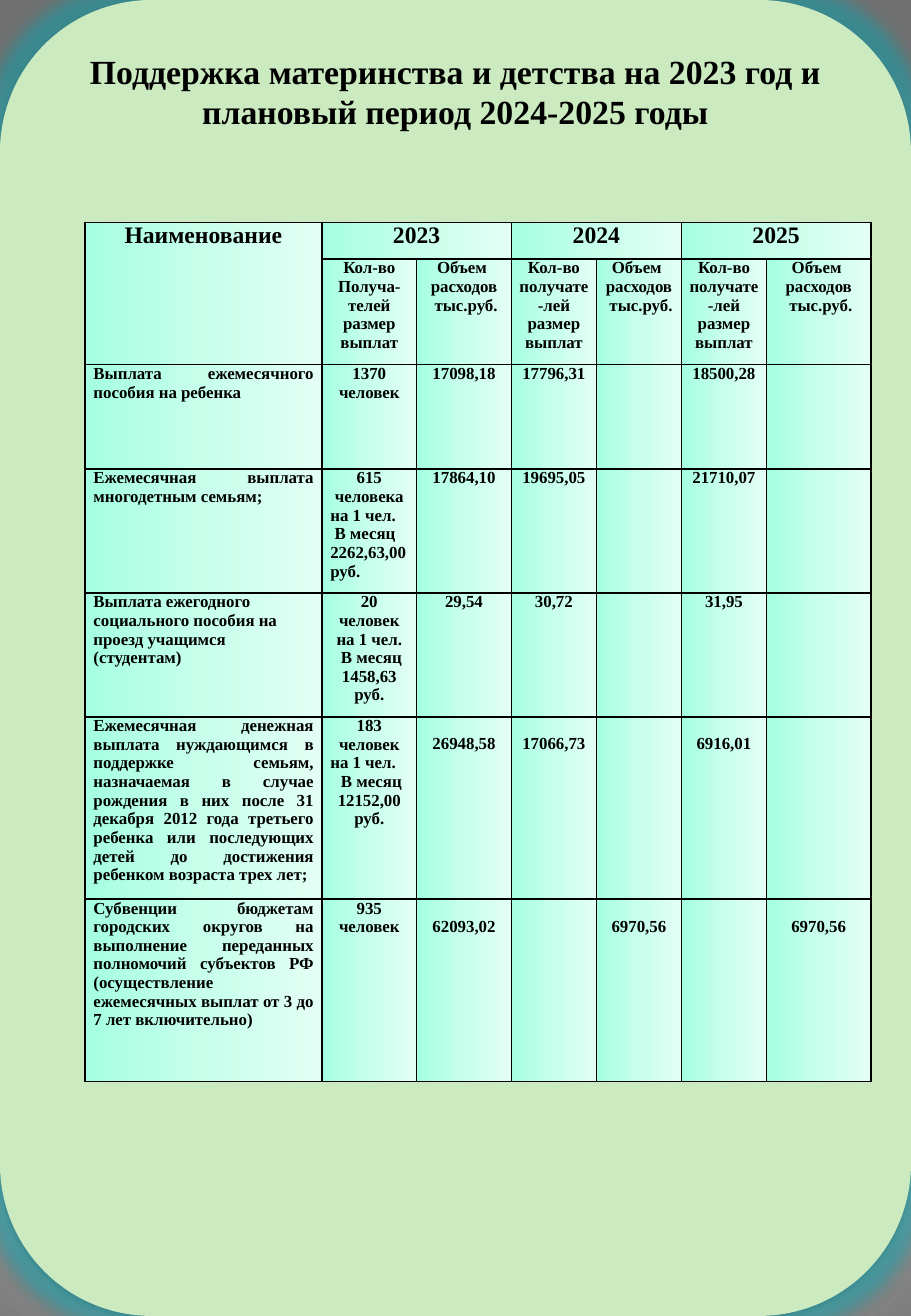
from lxml.etree import SubElement
from pptx import Presentation
from pptx.dml.color import RGBColor
from pptx.enum.shapes import MSO_SHAPE as Shape
from pptx.enum.text import MSO_ANCHOR as Anchor, PP_ALIGN as Align
from pptx.oxml.ns import qn
from pptx.util import Inches, Pt

BLACK = RGBColor(0x00, 0x00, 0x00)
WHITE = RGBColor(0xFF, 0xFF, 0xFF)
GRAY = RGBColor(0x70, 0x70, 0x70)
PANEL_GREEN = RGBColor(0xCB, 0xEA, 0xC0)
GLOW_TEAL = RGBColor(0x00, 0xC5, 0xD4)
CELL_STOPS = [(0, RGBColor(0xA5, 0xFF, 0xE1)), (50, RGBColor(0xC7, 0xFF, 0xEB)),
              (100, RGBColor(0xE3, 0xFF, 0xF5))]
BACKGROUND_STOPS = [(0, WHITE), (25, WHITE), (100, GRAY)]

GRID_COLUMNS, GRID_ROWS = 75, 108.3
ALIGNS = {"c": Align.CENTER, "l": Align.LEFT, "j": Align.JUSTIFY}

TITLE = "Поддержка материнства и детства на 2023 год и плановый период 2024-2025 годы"
YEARS = ["2023", "2024", "2025"]
VOLUME = "Объем \nрасходов\n тыс.руб."
RECIPIENTS = "Кол-во\nполучате-лей\nразмер\nвыплат"
FIRST_RECIPIENTS = "Кол-во\nПолуча-телей\nразмер\nвыплат"
SUBHEADS = [FIRST_RECIPIENTS, VOLUME, RECIPIENTS, VOLUME, RECIPIENTS, VOLUME]
# Name and its alignment, recipients and their alignments, then the amounts
PAYMENTS = [
    ("Выплата ежемесячного пособия на ребенка ", "j", "1370 человек", "c",
     ["17098,18", "17796,31", "", "18500,28", ""]),
    ("Ежемесячная выплата многодетным семьям;", "j",
     "615 человека\nна 1 чел.\n В месяц 2262,63,00 руб.", "cll",
     ["17864,10", "19695,05", "", "21710,07", ""]),
    ("Выплата ежегодного социального пособия на проезд учащимся (студентам)", "l",
     "20 человек\nна 1 чел.\n В месяц 1458,63 руб.", "ccc",
     ["29,54", "30,72", "", "31,95", ""]),
    ("Ежемесячная денежная выплата нуждающимся в поддержке семьям, назначаемая "
     "в случае рождения в них после 31 декабря 2012 года третьего ребенка или "
     "последующих детей до достижения ребенком возраста трех лет;", "j",
     "183 человек\nна 1 чел.\n В месяц 12152,00 руб.", "clc",
     ["26948,58", "17066,73", "", "6916,01", ""]),
    ("Субвенции бюджетам городских округов на выполнение переданных полномочий "
     "субъектов РФ (осуществление ежемесячных выплат от 3 до 7 лет включительно)", "j",
     "935 человек", "c",
     ["62093,02", "", "6970,56", "", "6970,56"]),
]
COLUMN_WIDTHS = [19.5, 7.8, 7.8, 7, 7, 7, 8.6]
ROW_HEIGHTS = [3, 8.7, 8.6, 10.2, 10.2, 15, 15]
LOWERED_ROWS = (5, 6)


def add_color(parent, color, alpha=None):
    element = SubElement(parent, qn("a:srgbClr"), val=str(color))
    if alpha is not None:
        SubElement(element, qn("a:alpha"), val=str(alpha * 1000))


def add_stops(gradient, stops):
    stop_list = SubElement(gradient, qn("a:gsLst"))
    for position, color in stops:
        add_color(SubElement(stop_list, qn("a:gs"), pos=str(position * 1000)), color)


def write(frame, text, *, size=10, aligns="c"):
    """Write one paragraph per line; one letter of aligns serves all lines."""
    frame.word_wrap = True
    lines = text.split("\n")
    if len(aligns) == 1:
        aligns *= len(lines)
    for index, (line, align) in enumerate(zip(lines, aligns)):
        paragraph = frame.add_paragraph() if index else frame.paragraphs[0]
        paragraph.alignment = ALIGNS[align]
        run = paragraph.add_run()
        run.text = line
        run.font.name = "Times New Roman"
        run.font.size = Pt(size)
        run.font.bold = True
        run.font.color.rgb = BLACK


class SlideBuilder:
    def __init__(self, slide):
        self.slide = slide

    def grid(self, *lengths):
        return [Inches(length / 10) for length in lengths]

    def background(self):
        self.slide.background.fill.gradient()
        gradient = self.slide.element.find(".//" + qn("a:gradFill"))
        for child in list(gradient):
            gradient.remove(child)
        add_stops(gradient, BACKGROUND_STOPS)
        circle = SubElement(gradient, qn("a:path"), {"path": "circle"})
        SubElement(circle, qn("a:fillToRect"), l="10000", t="110000", r="10000", b="100000")

    def panel(self, title):
        panel = self.slide.shapes.add_shape(
            Shape.ROUNDED_RECTANGLE, *self.grid(0, 0, GRID_COLUMNS, GRID_ROWS))
        panel.fill.solid()
        panel.fill.fore_color.rgb = PANEL_GREEN
        panel.line.fill.background()
        panel.shadow.inherit = False
        effects = panel.element.spPr.find(qn("a:effectLst"))
        add_color(SubElement(effects, qn("a:glow"), rad=str(Pt(18))), GLOW_TEAL, 40)
        shadow = SubElement(effects, qn("a:outerShdw"), blurRad=str(Pt(3.5)),
                            dist=str(Pt(2.2)), dir="5400000", rotWithShape="0")
        add_color(shadow, BLACK, 32)
        panel.text_frame.vertical_anchor = Anchor.TOP
        write(panel.text_frame, title, size=20)

    def table(self, left, top, widths, heights):
        frame = self.slide.shapes.add_table(
            len(heights), len(widths),
            *self.grid(left, top, sum(widths), sum(heights)))
        table = frame.table
        table.first_row = table.horz_banding = False
        for column, width in zip(table.columns, self.grid(*widths)):
            column.width = width
        for row, height in zip(table.rows, self.grid(*heights)):
            row.height = height
        for index, row in enumerate(table.rows):
            for cell in row.cells:
                cell.margin_left = cell.margin_right = Inches(0.05 if index < 2 else 0.07)
                cell.margin_top = cell.margin_bottom = 0
        for properties in frame.element.iter(qn("a:tcPr")):
            for side in ("a:lnL", "a:lnR", "a:lnT", "a:lnB"):
                border = SubElement(properties, qn(side), w=str(Pt(1)))
                add_color(SubElement(border, qn("a:solidFill")), BLACK)
            gradient = SubElement(properties, qn("a:gradFill"), rotWithShape="1")
            add_stops(gradient, CELL_STOPS)
            SubElement(gradient, qn("a:lin"), ang="0", scaled="0")
        return table


def fill_header(table):
    table.cell(0, 0).merge(table.cell(1, 0))
    write(table.cell(0, 0).text_frame, "Наименование", size=14)
    for index, year in enumerate(YEARS):
        column = 1 + 2 * index
        table.cell(0, column).merge(table.cell(0, column + 1))
        write(table.cell(0, column).text_frame, year, size=14)
    for column, subhead in enumerate(SUBHEADS, 1):
        write(table.cell(1, column).text_frame, subhead)


def fill_payments(table):
    for row, (name, name_align, people, people_aligns, amounts) in enumerate(PAYMENTS, 2):
        write(table.cell(row, 0).text_frame, name, aligns=name_align)
        write(table.cell(row, 1).text_frame, people, aligns=people_aligns)
        for column, amount in enumerate(amounts, 2):
            cell = table.cell(row, column)
            if amount:
                write(cell.text_frame, amount)
                cell.margin_top = Inches(0.15 if row in LOWERED_ROWS else 0)


def main():
    deck = Presentation()
    deck.slide_width, deck.slide_height = Inches(7.5), Inches(10.83)
    builder = SlideBuilder(deck.slides.add_slide(deck.slide_layouts[6]))
    builder.background()
    builder.panel(TITLE)
    payments = builder.table(7, 18.3, COLUMN_WIDTHS, ROW_HEIGHTS)
    fill_header(payments)
    fill_payments(payments)
    deck.save("out.pptx")


if __name__ == "__main__":
    main()
